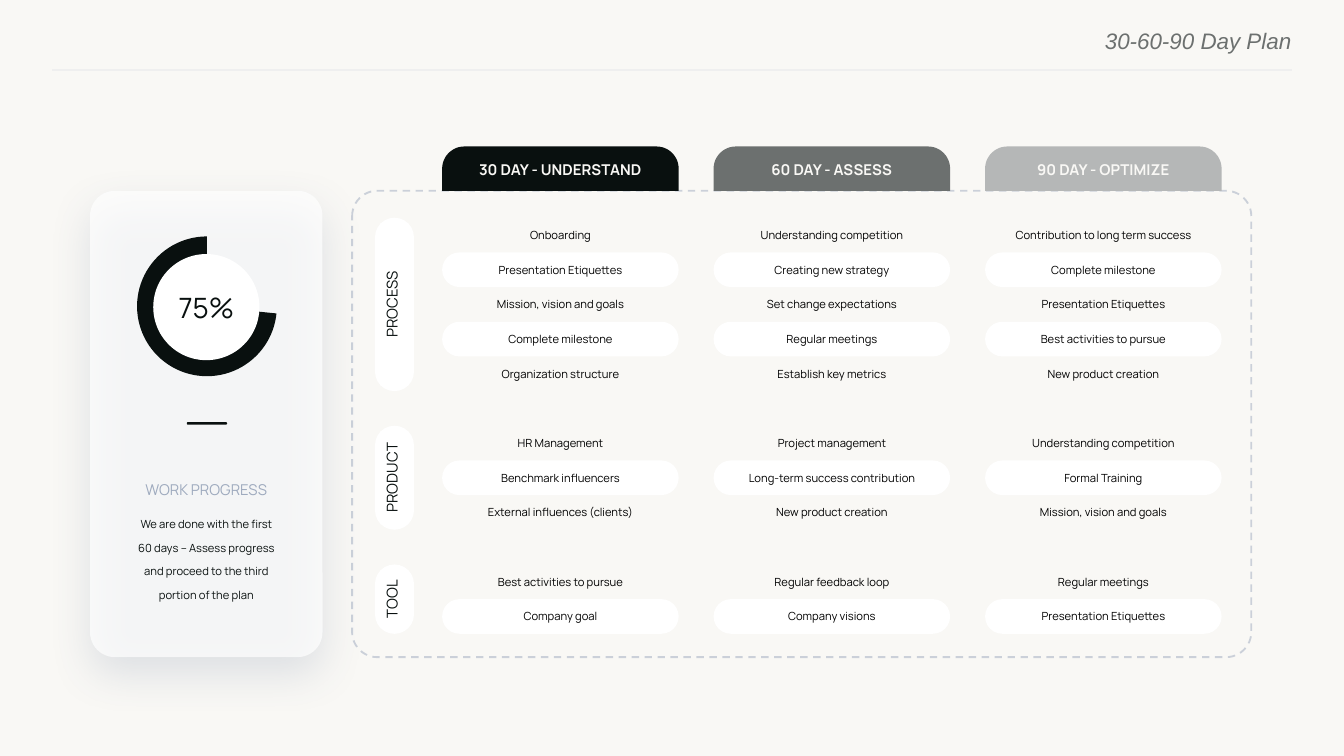
from lxml import etree
from pptx import Presentation
from pptx import util as u
from pptx.dml.color import RGBColor
from pptx.enum import dml, shapes, text
from pptx.oxml import ns

COLORS = {
    "paper": "F9F8F5", "ink": "09100F", "black": "000000", "white": "FFFFFF",
    "slate": "6C706F", "silver": "B5B7B7", "mist": "9EAABE", "rule": "EFEFEF",
    "shadow": "475D84",
}
UNIT = u.Inches(0.1)  # the slide is a grid of 100 columns by 56.25 rows
ROW = 2.58
FIRST_ROW = 16.2
COLUMN_LEFT, COLUMN_STEP, COLUMN_WIDTH = 32.9, 20.2, 17.6
PRESET = shapes.MSO_SHAPE
ALIGN = text.PP_ALIGN

PHASES = [("30 DAY - UNDERSTAND", "ink"), ("60 DAY - ASSESS", "slate"),
          ("90 DAY - OPTIMIZE", "silver")]
# Section name, first row on the plan, one line of three activities per row
SECTIONS = [
    ("PROCESS", 0, [
        ("Onboarding", "Understanding competition", "Contribution to long term success"),
        ("Presentation Etiquettes", "Creating new strategy", "Complete milestone"),
        ("Mission, vision and goals", "Set change expectations", "Presentation Etiquettes"),
        ("Complete milestone", "Regular meetings", "Best activities to pursue"),
        ("Organization structure", "Establish key metrics", "New product creation"),
    ]),
    ("PRODUCT", 6, [
        ("HR Management", "Project management", "Understanding competition"),
        ("Benchmark influencers", "Long-term success contribution", "Formal Training"),
        ("External influences (clients)", "New product creation", "Mission, vision and goals"),
    ]),
    ("TOOL", 10, [
        ("Best activities to pursue", "Regular feedback loop", "Regular meetings"),
        ("Company goal", "Company visions", "Presentation Etiquettes"),
    ]),
]


def rgb(name):
    return RGBColor.from_string(COLORS[name])


def write(paragraph, words, size=6, color="black", font="Manrope", bold=False,
          italic=False, align=ALIGN.CENTER, spacing=None, before=0):
    paragraph.alignment = align
    paragraph.space_before = u.Pt(before)
    if spacing:
        paragraph.line_spacing = spacing
    run = paragraph.add_run()
    run.text = words
    run.font.name, run.font.size = font, u.Pt(size)
    run.font.bold, run.font.italic = bold, italic
    run.font.color.rgb = rgb(color)


def set_alpha(fill_parent, percent):
    for color in fill_parent.iter(ns.qn("a:srgbClr")):
        etree.SubElement(color, ns.qn("a:alpha"), val=str(percent * 1000))


class PlanSlide:
    def __init__(self, presentation):
        self.slide = presentation.slides.add_slide(presentation.slide_layouts[5])
        self.slide.background.fill.solid()
        self.slide.background.fill.fore_color.rgb = rgb("paper")

    def place(self, *box):
        return [round(length * UNIT) for length in box]

    def frame(self, shape, margins, anchor=text.MSO_ANCHOR.MIDDLE):
        frame = shape.text_frame
        frame.word_wrap = True
        frame.auto_size = text.MSO_AUTO_SIZE.NONE
        frame.vertical_anchor = anchor
        (frame.margin_left, frame.margin_top, frame.margin_right,
         frame.margin_bottom) = self.place(*margins)
        return frame

    def title(self, box, words, **style):
        title = self.slide.shapes.title
        title.left, title.top, title.width, title.height = self.place(*box)
        frame = self.frame(title, (0, 0, 0, 0), text.MSO_ANCHOR.TOP)
        write(frame.paragraphs[0], words, **style)

    def rule(self, left, top, right, color, weight):
        line = self.slide.shapes.add_connector(
            shapes.MSO_CONNECTOR.STRAIGHT, *self.place(left, top, right, top))
        line.line.color.rgb = rgb(color)
        line.line.width = u.Pt(weight)
        etree.SubElement(line._element.spPr, ns.qn("a:effectLst"))

    def shape(self, preset, box, fill=None, adjust=(), words=None, top_margin=0.4,
              turn=0, **style):
        shape = self.slide.shapes.add_shape(preset, *self.place(*box))
        shape.shadow.inherit = False
        shape.line.fill.background()
        shape.rotation = turn
        for index, value in enumerate(adjust):
            shape.adjustments[index] = value
        if fill:
            shape.fill.solid()
            shape.fill.fore_color.rgb = rgb(fill)
        else:
            shape.fill.background()
        if words:
            frame = self.frame(shape, (0.4, top_margin, 0.4, 0.4))
            write(frame.paragraphs[0], words, **style)
        return shape

    def pill(self, box, fill="white", **style):
        return self.shape(PRESET.ROUNDED_RECTANGLE, box, fill, (0.5,), **style)

    def text_box(self, box, margins, anchor, *parts):
        shape = self.slide.shapes.add_textbox(*self.place(*box))
        frame = self.frame(shape, margins, anchor)
        for index, (words, style) in enumerate(parts):
            paragraph = frame.add_paragraph() if index else frame.paragraphs[0]
            write(paragraph, words, **style)

    def dashed_frame(self, box, color):
        shape = self.shape(PRESET.ROUNDED_RECTANGLE, box, adjust=(0.054,))
        shape.line.color.rgb = rgb(color)
        shape.line.width = u.Pt(1)
        shape.line.dash_style = dml.MSO_LINE.DASH
        set_alpha(shape._element.spPr, 50)

    def card(self, box):
        shape = self.shape(PRESET.ROUNDED_RECTANGLE, box, "white", (0.107,))
        properties = shape._element.spPr
        set_alpha(properties, 70)
        shadow = etree.SubElement(
            properties.find(ns.qn("a:effectLst")), ns.qn("a:outerShdw"),
            blurRad=str(u.Pt(23)), dist=str(u.Pt(8.7)), dir="5400000",
            algn="t", rotWithShape="0")
        etree.SubElement(shadow, ns.qn("a:srgbClr"), val=COLORS["shadow"])
        set_alpha(shadow, 22)

    def section(self, name, first_row, lines):
        top, height = FIRST_ROW + first_row * ROW, len(lines) * ROW
        self.pill((27.9, top, 2.9, height))
        length = height - 0.8
        self.shape(PRESET.RECTANGLE,
                   (29.35 - length / 2, top + height / 2 - 1.05, length, 2.1),
                   "white", words=name, top_margin=0, turn=270, size=8, color="ink")
        for row, activities in enumerate(lines, first_row):
            for column, words in enumerate(activities):
                self.activity(column, row, words)

    def activity(self, column, row, words):
        box = (COLUMN_LEFT + column * COLUMN_STEP, FIRST_ROW + row * ROW,
               COLUMN_WIDTH, ROW)
        if row % 2:
            self.pill(box, words=words)
        else:
            self.text_box(box, (0.4,) * 4, text.MSO_ANCHOR.MIDDLE, (words, {}))


def main():
    presentation = Presentation()
    presentation.slide_width, presentation.slide_height = 100 * UNIT, round(56.25 * UNIT)
    plan = PlanSlide(presentation)

    # Heading
    plan.rule(3.9, 5.2, 96.1, "rule", 0.75)
    plan.title((49.2, 2, 46.9, 1.8), "30-60-90 Day Plan", size=12, font="Arial",
               color="slate", italic=True, align=ALIGN.RIGHT)

    # Plan: sections down, phases across
    plan.dashed_frame((26.2, 14.2, 66.9, 34.7), "mist")
    for section in SECTIONS:
        plan.section(*section)
    for column, (phase, color) in enumerate(PHASES):
        plan.shape(PRESET.ROUND_2_SAME_RECTANGLE,
                   (COLUMN_LEFT + column * COLUMN_STEP, 10.9, COLUMN_WIDTH, 3.3),
                   color, (0.5, 0), words=phase, top_margin=0, size=8,
                   color="paper", bold=True)

    # Progress card
    plan.card((6.7, 14.2, 17.3, 34.7))
    plan.shape(PRESET.PIE, (10.2, 17.6, 10.4, 10.4), "ink", (3.51, 162))
    plan.shape(PRESET.OVAL, (11.4, 18.9, 7.9, 7.9), "white", words="75%",
               size=15, color="ink")
    plan.text_box(
        (9.4, 34.4, 11.9, 10.4), (0.7, 0.4, 0.7, 0.4), text.MSO_ANCHOR.TOP,
        ("WORK PROGRESS", dict(size=8, color="mist", spacing=1.7)),
        ("We are done with the first 60 days – Assess progress and proceed to "
         "the third portion of the plan", dict(color="ink", spacing=1.75, before=5)))
    plan.pill((13.9, 31.4, 3, 0.2), "ink")

    presentation.save("out.pptx")


if __name__ == "__main__":
    main()
